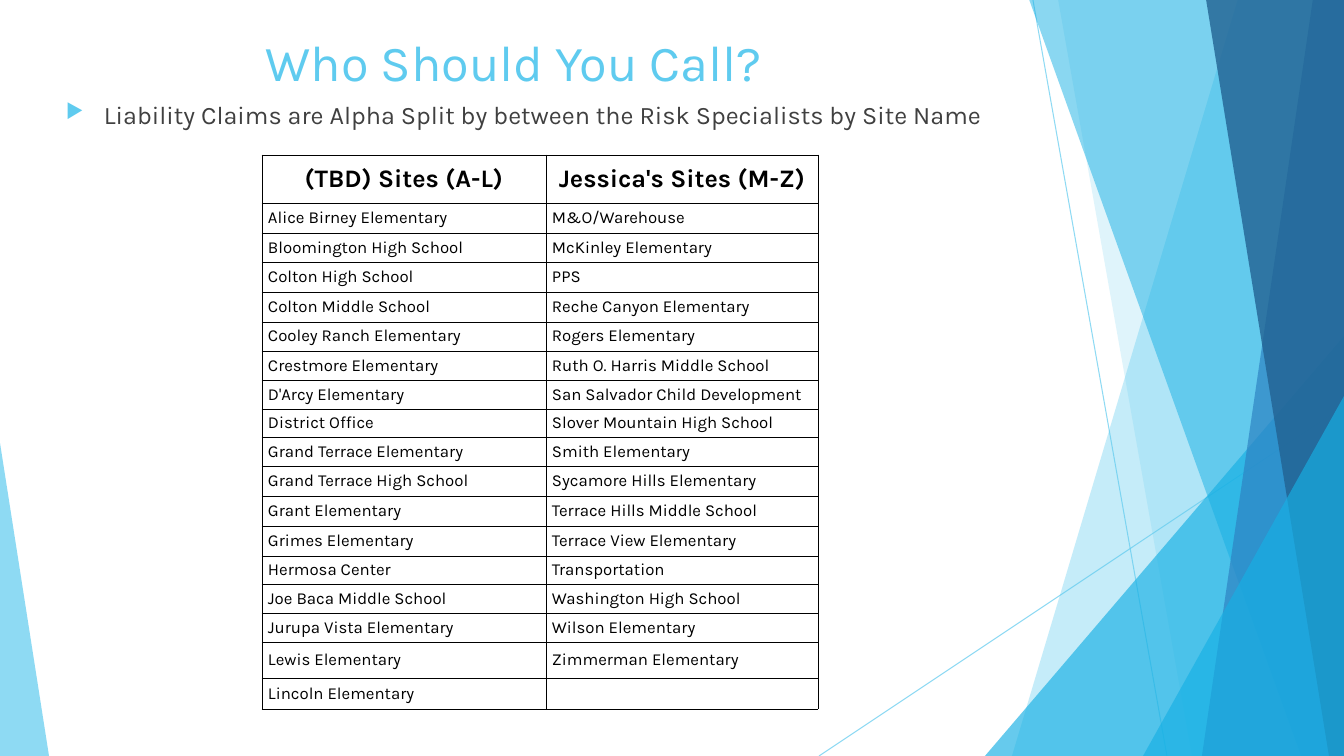
from dataclasses import dataclass
from itertools import pairwise, zip_longest

from lxml import etree
from pptx import Presentation
from pptx.dml.color import RGBColor
from pptx.enum.shapes import MSO_CONNECTOR, MSO_SHAPE
from pptx.enum.text import MSO_ANCHOR, PP_ALIGN
from pptx.oxml.ns import qn
from pptx.util import Emu, Pt

STRAIGHT = MSO_CONNECTOR.STRAIGHT
TRIANGLE = MSO_SHAPE.ISOSCELES_TRIANGLE
TOP, MIDDLE = MSO_ANCHOR.TOP, MSO_ANCHOR.MIDDLE
LEFT, CENTER, JUSTIFY = PP_ALIGN.LEFT, PP_ALIGN.CENTER, PP_ALIGN.JUSTIFY

FONT = "Karla"
COLORS = {"sky": "5FCBEF", "cyan": "17B0E4", "blue": "2E83C3",
          "navy": "226292", "body": "404040", "black": "000000"}
SLIDE_W, SLIDE_H = 1344, 756
PX_PER_INCH = 100.8


def px(length: int) -> Emu:
    return Emu(round(length * 914400 / PX_PER_INCH))


@dataclass(frozen=True)
class Ray:
    start: tuple[int, int]
    end: tuple[int, int]


@dataclass(frozen=True)
class Panel:
    """Band from a slanted left edge to the right side of the slide."""
    top_x: int
    bottom_x: int
    color: str
    opacity: int


@dataclass(frozen=True)
class Wedge:
    """Right triangle standing on the bottom of the slide."""
    left: int
    top: int
    width: int
    peak: int
    color: str
    opacity: int


@dataclass(frozen=True)
class TextStyle:
    size: int
    color: str
    align: PP_ALIGN
    bold: bool = False


# Decoration, from back to front
DECORATION = [
    Ray((1033, 0), (1167, 756)),
    Ray((1344, 406), (819, 756)),
    Panel(1238, 1012, "sky", 36),
    Panel(1058, 1192, "sky", 20),
    Wedge(985, 336, 359, 1, "cyan", 66),
    Panel(1029, 1301, "cyan", 50),
    Panel(1313, 1202, "blue", 70),
    Panel(1206, 1329, "navy", 80),
    Wedge(1143, 396, 201, 1, "cyan", 66),
    Wedge(0, 443, 49, 0, "sky", 70),
]

TITLE = TextStyle(36, "sky", CENTER)
SUBTITLE = TextStyle(18, "body", LEFT)
HEADER = TextStyle(18, "black", CENTER, True)
SITE = TextStyle(12, "black", JUSTIFY)

# Site table
SITES_A_L = [
    "(TBD) Sites (A-L)", "Alice Birney Elementary", "Bloomington High School",
    "Colton High School", "Colton Middle School", "Cooley Ranch Elementary",
    "Crestmore Elementary", "D'Arcy Elementary", "District Office",
    "Grand Terrace Elementary", "Grand Terrace High School", "Grant Elementary",
    "Grimes Elementary", "Hermosa Center", "Joe Baca Middle School",
    "Jurupa Vista Elementary", "Lewis Elementary", "Lincoln Elementary",
]
SITES_M_Z = [
    "Jessica's Sites (M-Z)", "M&O/Warehouse", "McKinley Elementary", "PPS",
    "Reche Canyon Elementary", "Rogers Elementary", "Ruth O. Harris Middle School",
    "San Salvador Child Development", "Slover Mountain High School",
    "Smith Elementary", "Sycamore Hills Elementary", "Terrace Hills Middle School",
    "Terrace View Elementary", "Transportation", "Washington High School",
    "Wilson Elementary", "Zimmerman Elementary",
]
COLUMN_EDGES = [262, 546, 818]
ROW_EDGES = [155, 203, 233, 262, 292, 322, 351, 381, 409, 437,
             466, 496, 526, 556, 584, 613, 642, 678, 709]


def rgb(name: str) -> RGBColor:
    return RGBColor.from_string(COLORS[name])


def set_opacity(shape, percent: int) -> None:
    for color in shape.element.spPr.iter(qn("a:srgbClr")):
        etree.SubElement(color, qn("a:alpha"), val=str(percent * 1000))


def paint(shape, color: str, opacity: int) -> None:
    shape.shadow.inherit = False
    shape.fill.solid()
    shape.fill.fore_color.rgb = rgb(color)
    shape.line.fill.background()
    set_opacity(shape, opacity)


def draw_ray(shapes, ray: Ray) -> None:
    line = shapes.add_connector(STRAIGHT, *map(px, ray.start + ray.end))
    line.line.color.rgb = rgb("sky")
    line.line.width = Pt(0.75)
    set_opacity(line, 70)
    etree.SubElement(line.element.spPr, qn("a:effectLst"))


def draw_panel(shapes, panel: Panel) -> None:
    corners = [(SLIDE_W, -1), (SLIDE_W, SLIDE_H), (panel.bottom_x, SLIDE_H)]
    outline = shapes.build_freeform(px(panel.top_x), px(-1))
    outline.add_line_segments([(px(x), px(y)) for x, y in corners], close=True)
    paint(outline.convert_to_shape(), panel.color, panel.opacity)


def draw_wedge(shapes, wedge: Wedge) -> None:
    triangle = shapes.add_shape(TRIANGLE, px(wedge.left), px(wedge.top),
                                px(wedge.width), px(SLIDE_H - wedge.top))
    triangle.adjustments[0] = wedge.peak
    paint(triangle, wedge.color, wedge.opacity)


def write(paragraph, text: str, style: TextStyle) -> None:
    paragraph.alignment = style.align
    run = paragraph.add_run()
    run.text = text
    run.font.name = FONT
    run.font.size = Pt(style.size)
    run.font.bold = style.bold
    run.font.color.rgb = rgb(style.color)


def draw_text(shapes, box: tuple[int, int, int, int], text: str, style: TextStyle):
    frame = shapes.add_textbox(*map(px, box)).text_frame
    frame.word_wrap = True
    frame.vertical_anchor = TOP
    write(frame.paragraphs[0], text, style)
    return frame.paragraphs[0]


def add_bullet(paragraph) -> None:
    paragraph.space_before = Pt(10)
    properties = paragraph._p.get_or_add_pPr()
    properties.set("marL", str(px(38)))
    properties.set("indent", str(px(-38)))
    color = etree.SubElement(properties, qn("a:buClr"))
    etree.SubElement(color, qn("a:srgbClr"), val=COLORS["sky"])
    etree.SubElement(properties, qn("a:buSzPct"), val="80000")
    etree.SubElement(properties, qn("a:buChar"), char="▶")


def format_cell(cell) -> None:
    cell.margin_left = cell.margin_right = px(6)
    cell.margin_top = cell.margin_bottom = px(4)
    cell.vertical_anchor = MIDDLE
    properties = cell._tc.get_or_add_tcPr()
    for side in ("lnL", "lnR", "lnT", "lnB"):
        border = etree.SubElement(properties, qn(f"a:{side}"), w=str(Pt(0.5)))
        fill = etree.SubElement(border, qn("a:solidFill"))
        etree.SubElement(fill, qn("a:srgbClr"), val=COLORS["black"])
    cell.fill.background()


def draw_sites(shapes) -> None:
    left, top = COLUMN_EDGES[0], ROW_EDGES[0]
    table = shapes.add_table(len(SITES_A_L), 2, px(left), px(top),
                             px(COLUMN_EDGES[-1] - left), px(ROW_EDGES[-1] - top)).table
    table.first_row = table.horz_banding = False
    for column, (start, end) in zip(table.columns, pairwise(COLUMN_EDGES)):
        column.width = px(end - start)
    for row, (start, end) in zip(table.rows, pairwise(ROW_EDGES)):
        row.height = px(end - start)
    for r, names in enumerate(zip_longest(SITES_A_L, SITES_M_Z)):
        for c, name in enumerate(names):
            cell = table.cell(r, c)
            format_cell(cell)
            paragraph = cell.text_frame.paragraphs[0]
            if name:
                write(paragraph, name, SITE if r else HEADER)
            else:
                etree.SubElement(paragraph._p, qn("a:endParaRPr"), sz=str(SITE.size * 100))


def main() -> None:
    deck = Presentation()
    deck.slide_width, deck.slide_height = px(SLIDE_W), px(SLIDE_H)
    shapes = deck.slides.add_slide(deck.slide_layouts[6]).shapes
    painters = {Ray: draw_ray, Panel: draw_panel, Wedge: draw_wedge}
    for part in DECORATION:
        painters[type(part)](shapes, part)
    draw_text(shapes, (40, 26, 948, 145), "Who Should You Call?", TITLE)
    claims = "Liability Claims are Alpha Split by between the Risk Specialists by Site Name"
    add_bullet(draw_text(shapes, (56, 94, 948, 61), claims, SUBTITLE))
    draw_sites(shapes)
    deck.save("out.pptx")


if __name__ == "__main__":
    main()
